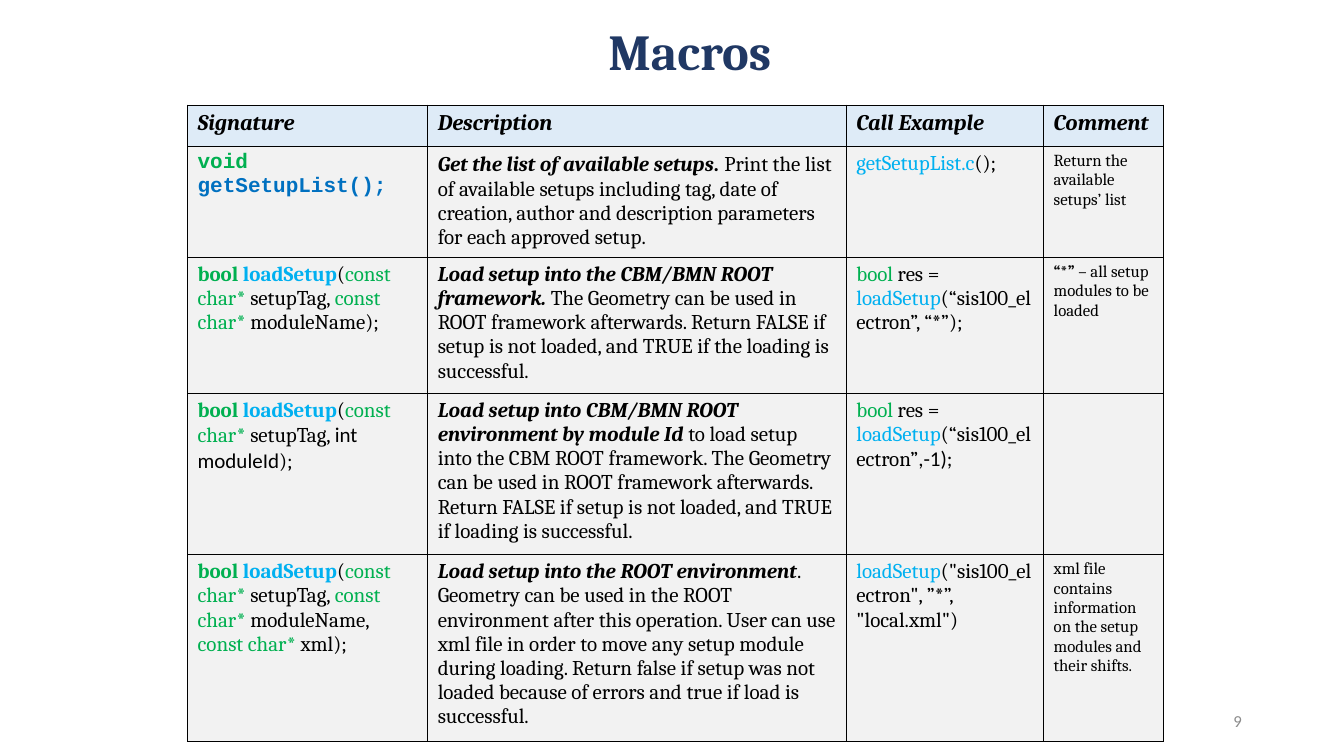
from typing import NamedTuple

from lxml import etree
from pptx import Presentation
from pptx.dml.color import RGBColor
from pptx.enum.text import MSO_ANCHOR, PP_ALIGN
from pptx.oxml.ns import qn
from pptx.util import Pt

MIDDLE = MSO_ANCHOR.MIDDLE
CENTER, RIGHT = PP_ALIGN.CENTER, PP_ALIGN.RIGHT
BLANK_LAYOUT = 6

COLORS = {
    "black": "000000",
    "navy": "203864",
    "grey": "8C8C8C",
    "green": "00B050",
    "blue": "0070C0",
    "sky": "00B0F0",
    "header": "DEEBF7",
    "body": "F2F2F2",
}
BASE = {"name": "Cambria", "size": Pt(15), "bold": False, "italic": False, "color": "black"}
STYLES = {
    "plain": {},
    "title": {"size": Pt(36), "bold": True, "color": "navy"},
    "number": {"name": "Calibri", "size": Pt(12), "color": "grey"},
    "header": {"size": Pt(16), "bold": True, "italic": True},
    "lead": {"bold": True, "italic": True},
    "lead sans": {"name": "Calibri", "bold": True, "italic": True},
    "sans": {"name": "Calibri"},
    "type": {"color": "green"},
    "return": {"color": "green", "bold": True},
    "call": {"color": "sky"},
    "function": {"color": "sky", "bold": True},
    "mono type": {"name": "Courier New", "color": "green", "bold": True},
    "mono function": {"name": "Courier New", "color": "blue", "bold": True},
    "comment": {"size": Pt(12)},
    "comment bold": {"size": Pt(12), "bold": True},
}


class Run(NamedTuple):
    text: str
    style: str = "plain"


class Label(NamedTuple):
    run: Run
    left: float
    top: float
    width: float
    height: float
    align: PP_ALIGN
    spacing: float


class Row(NamedTuple):
    height: float
    fill: str
    cells: list[list[Run]]


LABELS = [
    Label(Run("Macros", "title"), 167, 2, 651.5, 74, CENTER, 0.9),
    Label(Run("9", "number"), 678.25, 500.5, 216, 28.8, RIGHT, 1.0),
]

CONST_CHAR = Run("const char* ", "type")
SETUP_TAG = Run("setupTag, ")
LOAD_SETUP = Run("loadSetup", "call")
LOAD_SIGNATURE = [
    Run("bool ", "return"), Run("loadSetup", "function"), Run("("), CONST_CHAR, SETUP_TAG,
]
LOAD_RESULT = [Run("bool", "type"), Run(" res = "), LOAD_SETUP]

TABLE_LEFT, TABLE_TOP = 134, 75
COLUMN_WIDTHS = [171.5, 299, 141, 85.5]
HEADINGS = ["Signature", "Description", "Call Example", "Comment"]
ROWS = [
    Row(29.5, "header", [[Run(heading, "header")] for heading in HEADINGS]),
    Row(77, "body", [
        [Run("void ", "mono type"), Run("getSetupList();", "mono function")],
        [Run("Get the list of available setups", "lead"), Run(". ", "lead sans"),
         Run("Print the list of available setups including tag, date of creation, author "
             "and description parameters for each approved setup.")],
        [Run("getSetupList.c", "call"), Run("();")],
        [Run("Return the available setups’ list", "comment")],
    ]),
    Row(94, "body", [
        LOAD_SIGNATURE + [CONST_CHAR, Run("moduleName);")],
        [Run("Load setup into the CBM/BMN ROOT framework. ", "lead"),
         Run("The Geometry can be used in ROOT framework afterwards. Return FALSE if setup "
             "is not loaded, and TRUE if the loading is successful.")],
        LOAD_RESULT + [Run("(“sis100_electron”, “*”);")],
        [Run("“*”", "comment bold"), Run(" – all setup modules to be loaded", "comment")],
    ]),
    Row(110.5, "body", [
        LOAD_SIGNATURE + [Run("int moduleId", "sans"), Run(");")],
        [Run("Load setup into CBM/BMN ROOT environment by module Id ", "lead"),
         Run("to load setup into the CBM ROOT framework. The Geometry can be used in ROOT "
             "framework afterwards. Return FALSE if setup is not loaded, and TRUE if loading "
             "is successful.")],
        LOAD_RESULT + [Run("(“sis100_electron”"), Run(",-1);", "sans")],
        [],
    ]),
    Row(127.5, "body", [
        LOAD_SIGNATURE + [CONST_CHAR, Run("moduleName, "), CONST_CHAR, Run("xml);")],
        [Run("Load setup into the ROOT environment", "lead"),
         Run(". Geometry can be used in the ROOT environment after this operation. User can "
             "use xml file in order to move any setup module during loading. Return false if "
             "setup was not loaded because of errors and true if load is successful.")],
        [LOAD_SETUP, Run("(\"sis100_electron\", ”*”, \"local.xml\")")],
        [Run("xml file contains information on the setup modules and their shifts.", "comment")],
    ]),
]


def rgb(color: str) -> RGBColor:
    return RGBColor.from_string(COLORS[color])


def add_runs(paragraph, runs: list[Run]) -> None:
    for item in runs:
        run = paragraph.add_run()
        run.text = item.text
        for attribute, value in (BASE | STYLES[item.style]).items():
            if attribute == "color":
                run.font.color.rgb = rgb(value)
            else:
                setattr(run.font, attribute, value)


def add_label(slide, label: Label) -> None:
    shape = slide.shapes.add_textbox(
        Pt(label.left), Pt(label.top), Pt(label.width), Pt(label.height))
    frame = shape.text_frame
    frame.word_wrap = True
    frame.vertical_anchor = MIDDLE
    paragraph = frame.paragraphs[0]
    paragraph.alignment = label.align
    paragraph.line_spacing = label.spacing
    add_runs(paragraph, [label.run])


def add_borders(cell) -> None:
    properties = cell._tc.get_or_add_tcPr()
    for side in ("lnL", "lnR", "lnT", "lnB"):
        line = etree.SubElement(properties, qn(f"a:{side}"), w=str(Pt(0.5)))
        fill = etree.SubElement(line, qn("a:solidFill"))
        etree.SubElement(fill, qn("a:srgbClr"), val=COLORS["black"])


def add_macro_table(slide) -> None:
    table = slide.shapes.add_table(
        len(ROWS), len(COLUMN_WIDTHS), Pt(TABLE_LEFT), Pt(TABLE_TOP),
        Pt(sum(COLUMN_WIDTHS)), Pt(sum(row.height for row in ROWS))).table
    table.horz_banding = False
    for column, width in zip(table.columns, COLUMN_WIDTHS):
        column.width = Pt(width)
    for table_row, row in zip(table.rows, ROWS):
        table_row.height = Pt(row.height)
        for cell, runs in zip(table_row.cells, row.cells):
            add_borders(cell)
            cell.fill.solid()
            cell.fill.fore_color.rgb = rgb(row.fill)
            add_runs(cell.text_frame.paragraphs[0], runs)


def main() -> None:
    presentation = Presentation()
    presentation.slide_width, presentation.slide_height = Pt(960), Pt(540)
    slide = presentation.slides.add_slide(presentation.slide_layouts[BLANK_LAYOUT])
    for label in LABELS:
        add_label(slide, label)
    add_macro_table(slide)
    presentation.save("out.pptx")


if __name__ == "__main__":
    main()
